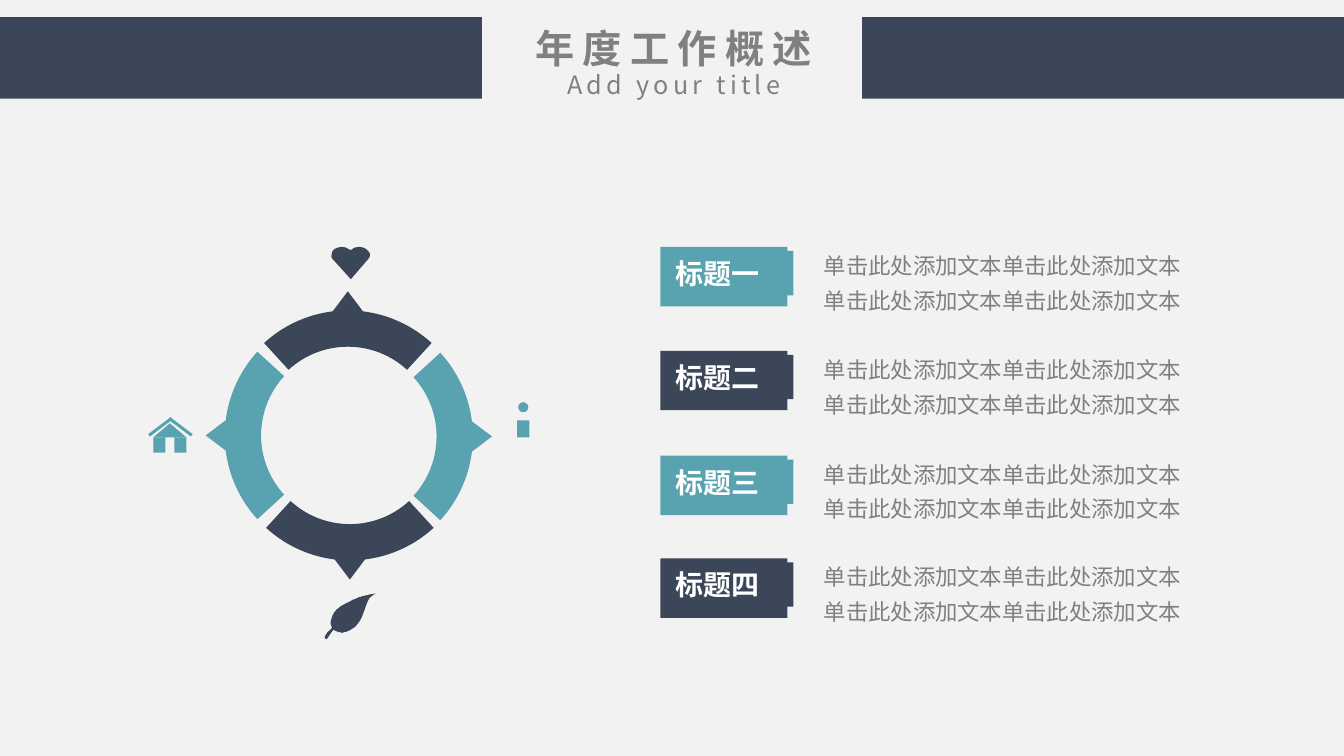
from math import atan, cos, degrees, hypot, radians, sin, tan
from lxml import etree
from pptx import Presentation
from pptx.dml.color import RGBColor
from pptx.enum.shapes import MSO_SHAPE
from pptx.enum.text import MSO_ANCHOR, MSO_AUTO_SIZE, PP_ALIGN
from pptx.oxml.ns import qn
from pptx.util import Inches, Pt

NAVY, TEAL, GREY, WHITE, PALE = "3B4658", "59A3B0", "808080", "FFFFFF", "F2F2F2"
CJK = "Noto Sans CJK SC"


def paint(sp, color):
    sp.shadow.inherit = False
    sp.fill.solid()
    sp.fill.fore_color.rgb = RGBColor.from_string(color)
    sp.line.fill.background()


def write(tf, lines, color, size, font=CJK, bold=False, spacing=0,
          align=PP_ALIGN.LEFT, line_spacing=1.0, anchor=MSO_ANCHOR.TOP):
    """Fill a text frame with one paragraph per line; spacing is in points."""
    frame_format = {"word_wrap": True, "vertical_anchor": anchor,
                    "auto_size": MSO_AUTO_SIZE.NONE}
    font_format = {"name": font, "size": Pt(size), "bold": bold}
    for name, value in frame_format.items():
        setattr(tf, name, value)
    for i, line in enumerate(lines):
        p = tf.add_paragraph() if i else tf.paragraphs[0]
        p.alignment = align
        p.line_spacing = line_spacing
        r = p.add_run()
        r.text = line
        for name, value in font_format.items():
            setattr(r.font, name, value)
        r.font.color.rgb = RGBColor.from_string(color)
        rPr = r.font._element
        rPr.set("spc", str(spacing * 100))
        etree.SubElement(rPr, qn("a:ea")).set("typeface", CJK)


prs = Presentation()
prs.slide_width, prs.slide_height = Inches(13.33), Inches(7.5)
slide = prs.slides.add_slide(prs.slide_layouts[5])
slide.background.fill.solid()
slide.background.fill.fore_color.rgb = RGBColor.from_string(PALE)
shapes = slide.shapes

# Header
for left in (0, 8.55):
    paint(shapes.add_shape(MSO_SHAPE.RECTANGLE, Inches(left), Inches(0.17),
                           Inches(4.78), Inches(0.81)), NAVY)
title = shapes.title
title.left, title.top = Inches(5.14), Inches(0.19)
title.width, title.height = Inches(3.08), Inches(0.57)
write(title.text_frame, ["年度工作概述"], GREY, 28, bold=True, spacing=6,
      align=PP_ALIGN.CENTER)
subtitle = shapes.add_textbox(Inches(5.35), Inches(0.64), Inches(2.67), Inches(0.4))
write(subtitle.text_frame, ["Add your title"], GREY, 18, spacing=3,
      align=PP_ALIGN.CENTER)

# Labelled rows
rows = [("标题一", 2.45, TEAL), ("标题二", 3.48, NAVY),
        ("标题三", 4.52, TEAL), ("标题四", 5.54, NAVY)]
for label, top, color in rows:
    paint(shapes.add_shape(MSO_SHAPE.RECTANGLE, Inches(6.55), Inches(top),
                           Inches(1.26), Inches(0.59)), color)
    tab = shapes.add_shape(MSO_SHAPE.RECTANGLE, Inches(6.6), Inches(top + 0.04),
                           Inches(1.27), Inches(0.44))
    paint(tab, color)
    write(tab.text_frame, [label], WHITE, 20, font="Arial", bold=True,
          anchor=MSO_ANCHOR.MIDDLE)
    tf = shapes.add_textbox(Inches(8.1), Inches(top - 0.07),
                            Inches(3.91), Inches(0.78)).text_frame
    tf.margin_left = tf.margin_right = Inches(0.07)
    tf.margin_top = tf.margin_bottom = Inches(0.04)
    write(tf, ["单击此处添加文本" * 2] * 2, GREY, 16, line_spacing=1.3)

# Outlines are a start point, then Bezier curves (6 numbers) or lines (2 numbers)
outlines = []

# Ring of four arcs with pointers, first in polar points (radius, degrees)
OUTER, INNER, TIP, HALF_ARC, HALF_POINTER = 1.23, 0.87, 1.42, 42.5, 7
curves = []
for radius, begin, end in ((OUTER, -HALF_ARC, -HALF_POINTER),
                           (OUTER, HALF_POINTER, HALF_ARC),
                           (INNER, HALF_ARC, -HALF_ARC)):
    k = 4 / 3 * tan(radians(end - begin) / 4)
    reach, swing = radius * hypot(1, k), degrees(atan(k))
    curves.append([(reach, begin + swing), (reach, end - swing), (radius, end)])
before_pointer, after_pointer, inside = curves
arc = [[(OUTER, -HALF_ARC)], before_pointer, [(TIP, 0)], [(OUTER, HALF_POINTER)],
       after_pointer, [(INNER, HALF_ARC)], inside]
for turn, x, y, color in ((0, 3.46, 4.33, TEAL), (180, 3.46, 4.32, TEAL),
                          (90, 3.47, 4.33, NAVY), (270, 3.45, 4.31, NAVY)):
    outline = []
    for segment in arc:
        numbers = []
        for r, a in segment:
            numbers += [x + r * cos(radians(a + turn)), y + r * sin(radians(a + turn))]
        outline.append(numbers)
    outlines.append((color, outline))

# Heart and leaf
heart = [(3.48, 2.48), (3.47, 2.48, 3.45, 2.47, 3.44, 2.46),
         (3.42, 2.45, 3.4, 2.45, 3.38, 2.45), (3.36, 2.45, 3.34, 2.46, 3.32, 2.47),
         (3.3, 2.48, 3.29, 2.5, 3.29, 2.52), (3.28, 2.53, 3.29, 2.55, 3.29, 2.56),
         (3.48, 2.77), (3.66, 2.56), (3.67, 2.55, 3.67, 2.53, 3.67, 2.52),
         (3.66, 2.5, 3.65, 2.48, 3.63, 2.47), (3.62, 2.46, 3.59, 2.45, 3.57, 2.45),
         (3.55, 2.45, 3.53, 2.45, 3.51, 2.46), (3.5, 2.47, 3.48, 2.48, 3.48, 2.48)]
leaf = [(3.29, 6.22), (3.28, 6.2, 3.27, 6.18, 3.29, 6.13),
        (3.3, 6.09, 3.33, 6.05, 3.36, 6.03), (3.39, 6, 3.49, 5.96, 3.55, 5.93),
        (3.61, 5.91, 3.7, 5.89, 3.72, 5.89), (3.74, 5.88, 3.69, 5.9, 3.67, 5.92),
        (3.66, 5.93, 3.66, 5.93, 3.64, 5.96), (3.63, 6, 3.61, 6.07, 3.58, 6.12),
        (3.56, 6.16, 3.54, 6.19, 3.51, 6.22), (3.48, 6.25, 3.44, 6.27, 3.41, 6.27),
        (3.38, 6.28, 3.35, 6.27, 3.33, 6.26), (3.31, 6.25, 3.29, 6.24, 3.29, 6.22)]
stem = [(3.32, 6.22), (3.32, 6.24, 3.28, 6.28, 3.27, 6.3),
        (3.25, 6.32, 3.25, 6.34, 3.24, 6.34), (3.23, 6.35, 3.22, 6.33, 3.22, 6.32),
        (3.22, 6.31, 3.24, 6.29, 3.25, 6.27), (3.27, 6.26, 3.3, 6.22, 3.31, 6.21),
        (3.32, 6.21, 3.33, 6.21, 3.32, 6.22)]
leaf_half = [(3.73, 5.89), (3.75, 5.88, 3.69, 5.9, 3.68, 5.92),
             (3.67, 5.93, 3.66, 5.93, 3.65, 5.96), (3.63, 6, 3.61, 6.07, 3.59, 6.12),
             (3.57, 6.16, 3.55, 6.19, 3.52, 6.22), (3.47, 6.25), (3.42, 6.27),
             (3.38, 6.28), (3.47, 5.97), (3.5, 5.95),
             (3.52, 5.95, 3.54, 5.94, 3.55, 5.93), (3.61, 5.91, 3.7, 5.89, 3.73, 5.89)]
vein = [(3.3, 6.22), (3.32, 6.2, 3.37, 6.13, 3.4, 6.1),
        (3.43, 6.07, 3.49, 6.04, 3.49, 6.03), (3.5, 6.03, 3.45, 6.07, 3.43, 6.09),
        (3.41, 6.12, 3.37, 6.16, 3.35, 6.18), (3.33, 6.2, 3.32, 6.23, 3.31, 6.23),
        (3.3, 6.24, 3.29, 6.24, 3.3, 6.22)]
outlines += [(NAVY, outline) for outline in (heart, leaf, stem, leaf_half, vein)]

for color, outline in outlines:
    start, *ends = [(Inches(s[-2]), Inches(s[-1])) for s in outline]
    builder = shapes.build_freeform(*start)
    builder.add_line_segments(ends, close=True)
    sp = builder.convert_to_shape()
    paint(sp, color)
    # Give each curved segment its two control points
    lines = list(sp._element.iter(qn("a:lnTo")))
    for line, segment in zip(lines, outline[1:]):
        if len(segment) == 6:
            line.tag = qn("a:cubicBezTo")
            for i in (0, 2):
                pt = etree.Element(qn("a:pt"))
                pt.set("x", str(Inches(segment[i]) - sp.left))
                pt.set("y", str(Inches(segment[i + 1]) - sp.top))
                line.insert(i // 2, pt)

# Person and house
icon_parts = [
    (MSO_SHAPE.OVAL, 5.14, 3.99, 0.1, 0.1, 0),
    (MSO_SHAPE.RECTANGLE, 5.13, 4.17, 0.12, 0.17, 0),
    (MSO_SHAPE.RECTANGLE, 1.45, 4.22, 0.28, 0.03, 323),
    (MSO_SHAPE.RECTANGLE, 1.65, 4.22, 0.28, 0.03, 37),
    (MSO_SHAPE.ISOSCELES_TRIANGLE, 1.52, 4.2, 0.33, 0.14, 0),
    (MSO_SHAPE.RECTANGLE, 1.52, 4.34, 0.12, 0.15, 0),
    (MSO_SHAPE.RECTANGLE, 1.73, 4.34, 0.12, 0.15, 0),
]
for kind, left, top, width, height, rotation in icon_parts:
    sp = shapes.add_shape(kind, Inches(left), Inches(top), Inches(width), Inches(height))
    sp.rotation = rotation
    paint(sp, TEAL)

prs.save("out.pptx")
